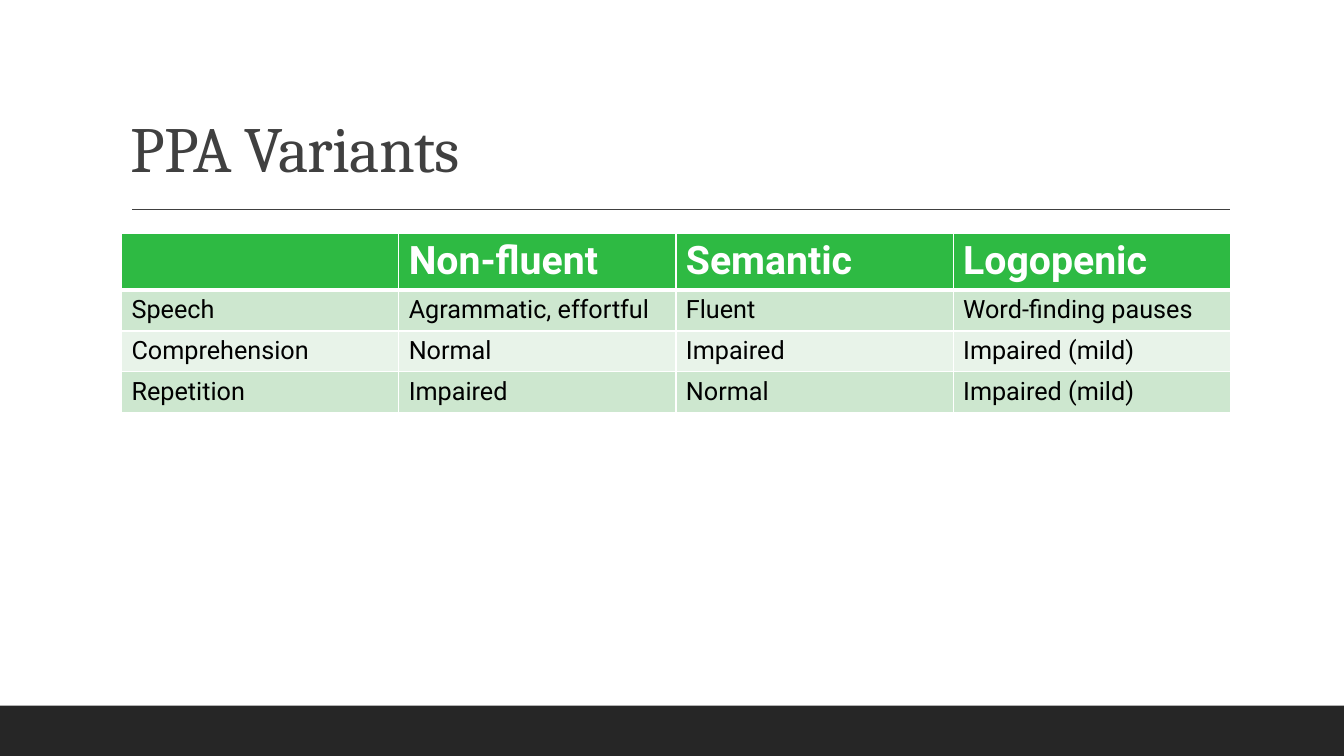
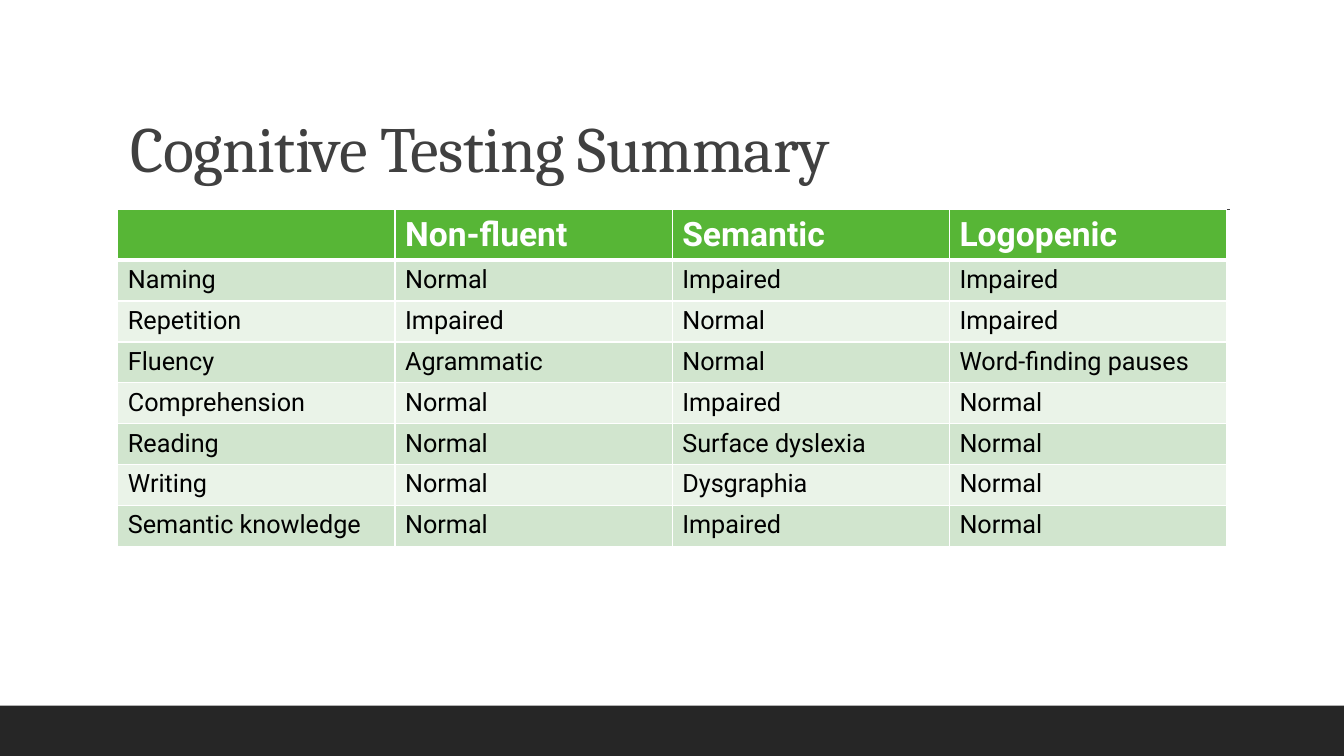
from lxml.etree import SubElement
from pptx import Presentation
from pptx.dml.color import RGBColor
from pptx.enum.shapes import MSO_CONNECTOR, MSO_SHAPE
from pptx.enum.text import MSO_ANCHOR
from pptx.oxml import parse_xml
from pptx.oxml.ns import nsdecls, qn
from pptx.util import Pt

# Content
HEADER = ("", "Non-fluent", "Semantic", "Logopenic")
SLIDES = [
    {
        "title": "PPA Variants",
        "left": 86.8, "top": 166.4, "header_height": 40, "header_size": 28,
        "fills": ("header_1", "odd_1", "even_1"),
        "rows": [
            ("Speech", "Agrammatic, effortful", "Fluent", "Word-finding pauses"),
            ("Comprehension", "Normal", "Impaired", "Impaired (mild)"),
            ("Repetition", "Impaired", "Normal", "Impaired (mild)"),
        ],
    },
    {
        "title": "Cognitive Testing Summary",
        "left": 84.2, "top": 149.8, "header_height": 35.4, "header_size": 24,
        "fills": ("header_2", "odd_2", "even_2"),
        "rows": [
            ("Naming", "Normal", "Impaired", "Impaired"),
            ("Repetition", "Impaired", "Normal", "Impaired"),
            ("Fluency", "Agrammatic", "Normal", "Word-finding pauses"),
            ("Comprehension", "Normal", "Impaired", "Normal"),
            ("Reading", "Normal", "Surface dyslexia", "Normal"),
            ("Writing", "Normal", "Dysgraphia", "Normal"),
            ("Semantic knowledge", "Normal", "Impaired", "Normal"),
        ],
    },
]

# Shared style
COLORS = {
    "band": "262626", "title": "404040", "white": "FFFFFF", "black": "000000",
    "header_1": "2EBA43", "odd_1": "CDE7CF", "even_1": "E8F3E9",
    "header_2": "57B636", "odd_2": "D1E5CE", "even_2": "EAF3E8",
}
TITLE_FONT, BODY_FONT = "Cambria", "Roboto"
WIDTH, HEIGHT, BAND_HEIGHT = 960, 540, 36
RULE_LEFT, RULE_RIGHT, RULE_Y = 94.4, 878.8, 149.6
COL_WIDTH, ROW_HEIGHT = 198, 29.2
THIN, THICK = 1, 3


def color(name):
    return RGBColor.from_string(COLORS[name])


def style(p, font, size, name, bold=False):
    p.font.name, p.font.size, p.font.bold = font, Pt(size), bold
    p.font.color.rgb = color(name)


def add_frame(s, title):
    """Bottom band, rule and title."""
    band = s.shapes.add_shape(MSO_SHAPE.RECTANGLE, 0, Pt(HEIGHT - BAND_HEIGHT),
                              Pt(WIDTH), Pt(BAND_HEIGHT))
    band.shadow.inherit = False
    band.fill.solid()
    band.fill.fore_color.rgb = color("band")
    band.line.fill.background()

    rule = s.shapes.add_connector(MSO_CONNECTOR.STRAIGHT, Pt(RULE_LEFT), Pt(RULE_Y),
                                  Pt(RULE_RIGHT), Pt(RULE_Y))
    rule.line.color.rgb = color("title")
    rule.line.width = Pt(1)
    SubElement(rule._element.spPr, qn("a:effectLst"))

    tf = s.shapes.add_textbox(Pt(86.4), Pt(22.6), Pt(792), Pt(114.2)).text_frame
    tf.word_wrap = True
    tf.vertical_anchor = MSO_ANCHOR.BOTTOM
    p = tf.paragraphs[0]
    r = p.add_run()
    r.text = title
    p.line_spacing = 0.9
    style(p, TITLE_FONT, 46, "title")
    r.font._element.set("spc", "-50")


def set_borders(cell, top, bottom):
    sides = (("L", THIN), ("R", THIN), ("T", top), ("B", bottom))
    tcPr = cell._tc.get_or_add_tcPr()
    for i, (side, width) in enumerate(sides):
        tcPr.insert(i, parse_xml(
            f'<a:ln{side} {nsdecls("a")} w="{Pt(width)}"><a:solidFill>'
            f'<a:srgbClr val="{COLORS["white"]}"/></a:solidFill></a:ln{side}>'))


def add_comparison(s, data):
    """Header row over rows in two alternating tints."""
    rows = [HEADER] + data["rows"]
    header_fill, odd_fill, even_fill = data["fills"]
    height = data["header_height"] + ROW_HEIGHT * len(data["rows"])
    table = s.shapes.add_table(len(rows), len(HEADER), Pt(data["left"]), Pt(data["top"]),
                               Pt(COL_WIDTH * len(HEADER)), Pt(height)).table
    for col in table.columns:
        col.width = Pt(COL_WIDTH)
    for i, texts in enumerate(rows):
        header = i == 0
        table.rows[i].height = Pt(data["header_height"] if header else ROW_HEIGHT)
        fill = header_fill if header else odd_fill if i % 2 else even_fill
        for j, text in enumerate(texts):
            cell = table.cell(i, j)
            cell.text = text
            cell.fill.solid()
            cell.fill.fore_color.rgb = color(fill)
            set_borders(cell, THICK if i == 1 else THIN, THICK if header else THIN)
            style(cell.text_frame.paragraphs[0], BODY_FONT,
                  data["header_size"] if header else 18,
                  "white" if header else "black", header)


def main():
    prs = Presentation()
    prs.slide_width, prs.slide_height = Pt(WIDTH), Pt(HEIGHT)
    for data in SLIDES:
        s = prs.slides.add_slide(prs.slide_layouts[6])
        add_frame(s, data["title"])
        add_comparison(s, data)
    prs.save("out.pptx")


if __name__ == "__main__":
    main()
